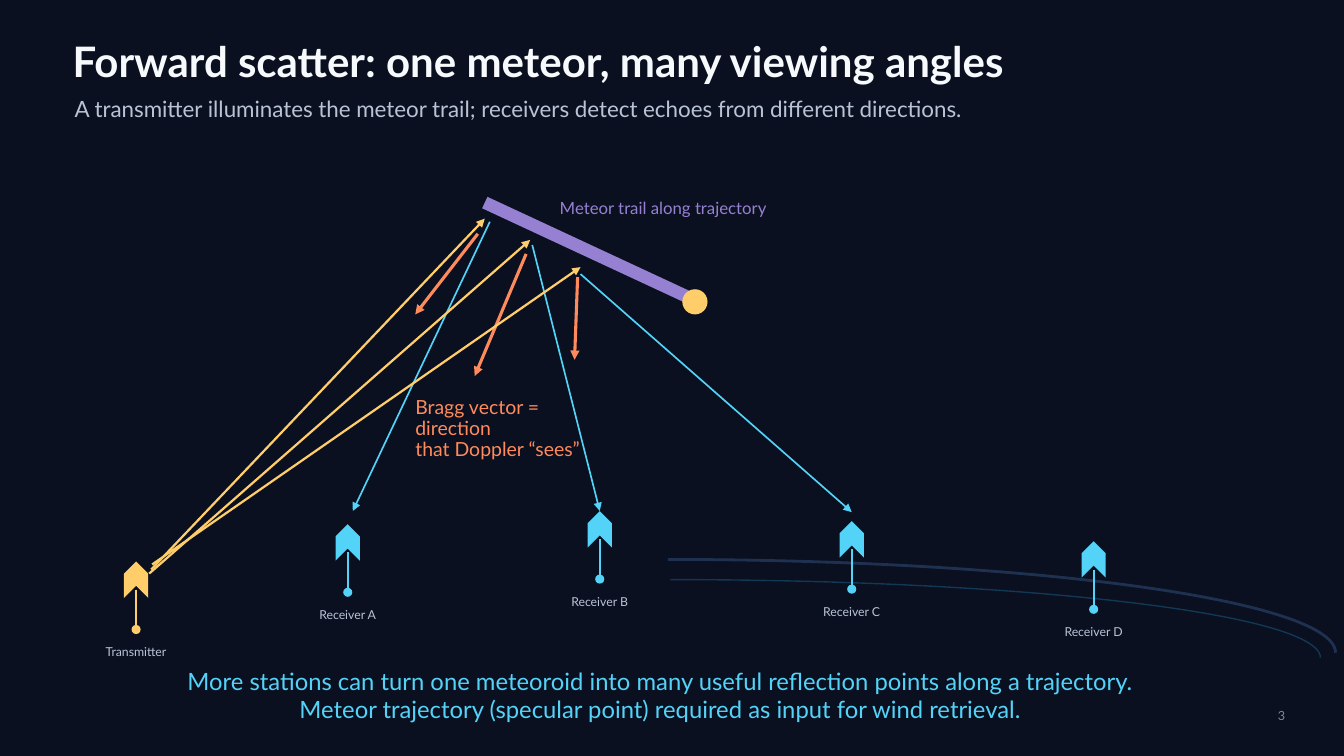
"""Builds the forward scatter slide with its stations, rays and Bragg vectors."""
from dataclasses import dataclass

from lxml.etree import SubElement
from pptx import Presentation
from pptx.dml.color import RGBColor
from pptx.dml.line import LineFormat
from pptx.enum.shapes import MSO_CONNECTOR, MSO_SHAPE
from pptx.enum.text import MSO_ANCHOR, MSO_AUTO_SIZE, PP_ALIGN
from pptx.oxml.ns import qn
from pptx.shapes.autoshape import Shape
from pptx.slide import Slide
from pptx.util import Pt


@dataclass(frozen=True)
class Theme:
    font: str = "Lato"
    background: str = "0B1020"
    title: str = "F7FAFC"
    muted: str = "B8C4D6"
    number: str = "7C879A"
    transmit: str = "FFCE6A"
    receive: str = "53D3F8"
    bragg: str = "FF8A5B"
    trail: str = "B99CFF"
    trail_label: str = "9680D2"
    outer_arc: str = "223556"
    inner_arc: str = "1A74A5"
    title_size: float = 30
    message_size: float = 17
    subtitle_size: float = 16
    bragg_size: float = 13.9
    trail_size: float = 12
    number_size: float = 9
    station_size: float = 8.8


THEME = Theme()


@dataclass(frozen=True)
class Box:
    left: float
    top: float
    width: float
    height: float


@dataclass(frozen=True)
class Label:
    text: str
    box: Box
    size: float
    color: str
    align: PP_ALIGN = PP_ALIGN.LEFT
    spacing: float = 1.0
    bold: bool = False


@dataclass(frozen=True)
class Line:
    x1: float
    y1: float
    x2: float
    y2: float
    color: str
    width: float
    arrow: bool = True
    opacity: int = 100


@dataclass(frozen=True)
class Arc:
    box: Box
    color: str
    width: float
    opacity: int


@dataclass(frozen=True)
class Station:
    name: str
    x: float
    base: float
    color: str = THEME.receive


TITLE = Label("Forward scatter: one meteor, many viewing angles",
              Box(51.84, 27.36, 856.8, 32.4), THEME.title_size, THEME.title, bold=True)

LABELS = [
    Label("A transmitter illuminates the meteor trail; receivers detect echoes from different directions.",
          Box(53.28, 65.5, 799.2, 24.5), THEME.subtitle_size, THEME.muted),
    Label("Meteor trail along trajectory", Box(380.16, 139.7, 187.2, 18),
          THEME.trail_size, THEME.trail_label, PP_ALIGN.CENTER),
    Label("Bragg vector = direction\nthat Doppler “sees”", Box(296.64, 281.5, 123.84, 50.4),
          THEME.bragg_size, THEME.bragg, spacing=0.9),
    Label("More stations can turn one meteoroid into many useful reflection points along a trajectory.\n"
          "Meteor trajectory (specular point) required as input for wind retrieval.",
          Box(86.4, 471.6, 770.4, 49.7), THEME.message_size, THEME.receive, PP_ALIGN.CENTER),
    Label("3", Box(896.4, 504, 21.6, 14.4), THEME.number_size, THEME.number, PP_ALIGN.RIGHT),
]

ARCS = [
    Arc(Box(0, 399.6, 954, 133.2), THEME.outer_arc, 2, 90),
    Arc(Box(14.4, 414, 928.8, 111.6), THEME.inner_arc, 1, 40),
]

TRAIL = Line(346.3, 144.7, 490.3, 211.7, THEME.trail, 9, arrow=False, opacity=80)
METEOROID = Box(487.4, 206.6, 18, 18)

INCIDENT = [(108, 406.8, 346.3, 156.2), (106.6, 409.7, 378.7, 171.4), (108.7, 403.2, 414.7, 190.8)]
ECHOES = [(349.9, 158.4, 252, 365), (380.2, 175, 428.4, 365), (414.7, 195.8, 608.4, 365.8)]
BRAGG = [(341.3, 167, 296.6, 224.6), (375.8, 181.4, 339.1, 268.6), (412.6, 198, 410.4, 257)]

STATIONS = [
    Station("Transmitter", 97.2, 446.4, THEME.transmit),
    Station("Receiver A", 248.4, 419.8),
    Station("Receiver B", 428.4, 410.4),
    Station("Receiver C", 608.4, 417.6),
    Station("Receiver D", 781.2, 432),
]


def write(sp: Shape, label: Label) -> None:
    box = label.box
    sp.left, sp.top, sp.width, sp.height = map(Pt, (box.left, box.top, box.width, box.height))
    tf = sp.text_frame
    tf.text = label.text
    tf.word_wrap = True
    tf.auto_size = MSO_AUTO_SIZE.NONE
    tf.vertical_anchor = MSO_ANCHOR.MIDDLE
    tf.margin_left = tf.margin_right = tf.margin_top = tf.margin_bottom = 0
    for p in tf.paragraphs:
        p.alignment = label.align
        p.line_spacing = label.spacing
        for r in p.runs:
            r.font.name = THEME.font
            r.font.size = Pt(label.size)
            r.font.bold = label.bold
            r.font.color.rgb = RGBColor.from_string(label.color)


def add_label(s: Slide, label: Label) -> None:
    write(s.shapes.add_textbox(0, 0, 0, 0), label)


def style_line(line: LineFormat, color: str, width: float, opacity: int) -> None:
    line.width = Pt(width)
    line.color.rgb = RGBColor.from_string(color)
    if opacity < 100:
        srgb = line.fill._xPr.find(qn("a:solidFill")).find(qn("a:srgbClr"))
        SubElement(srgb, qn("a:alpha"), val=str(opacity * 1000))


def add_line(s: Slide, line: Line) -> None:
    cxn = s.shapes.add_connector(MSO_CONNECTOR.STRAIGHT, Pt(line.x1), Pt(line.y1), Pt(line.x2), Pt(line.y2))
    style_line(cxn.line, line.color, line.width, line.opacity)
    props = cxn._element.spPr
    if line.arrow:
        SubElement(props.find(qn("a:ln")), qn("a:tailEnd"), type="triangle")
    SubElement(props, qn("a:effectLst"))


def add_solid(s: Slide, kind: MSO_SHAPE, box: Box, color: str) -> Shape:
    sp = s.shapes.add_shape(kind, Pt(box.left), Pt(box.top), Pt(box.width), Pt(box.height))
    sp.shadow.inherit = False
    sp.fill.solid()
    sp.fill.fore_color.rgb = RGBColor.from_string(color)
    sp.line.fill.background()
    return sp


def add_arc(s: Slide, arc: Arc) -> None:
    sp = add_solid(s, MSO_SHAPE.ARC, arc.box, arc.color)
    sp.fill.background()
    style_line(sp.line, arc.color, arc.width, arc.opacity)


def add_station(s: Slide, station: Station) -> None:
    x, base, color = station.x, station.base, station.color
    antenna = add_solid(s, MSO_SHAPE.CHEVRON, Box(x - 13, base - 41, 26, 17.3), color)
    antenna.rotation = 270
    add_line(s, Line(x, base - 25.2, x, base, color, 1.2, arrow=False))
    add_solid(s, MSO_SHAPE.OVAL, Box(x - 3.25, base, 6.5, 6.5), color)
    add_label(s, Label(station.name, Box(x - 39.6, base + 12.2, 79.2, 14.4),
                       THEME.station_size, THEME.muted, PP_ALIGN.CENTER))


def main() -> None:
    prs = Presentation()
    prs.slide_width, prs.slide_height = Pt(960), Pt(540)
    s = prs.slides.add_slide(prs.slide_layouts[5])
    s.background.fill.solid()
    s.background.fill.fore_color.rgb = RGBColor.from_string(THEME.background)
    write(s.shapes.title, TITLE)
    for arc in ARCS:
        add_arc(s, arc)
    for ends in ECHOES:
        add_line(s, Line(*ends, THEME.receive, 1.2))
    add_line(s, TRAIL)
    add_solid(s, MSO_SHAPE.OVAL, METEOROID, THEME.transmit)
    for station in STATIONS:
        add_station(s, station)
    for ends in BRAGG:
        add_line(s, Line(*ends, THEME.bragg, 2.2))
    for ends in INCIDENT:
        add_line(s, Line(*ends, THEME.transmit, 1.6))
    for label in LABELS:
        add_label(s, label)
    prs.save("out.pptx")


if __name__ == "__main__":
    main()
